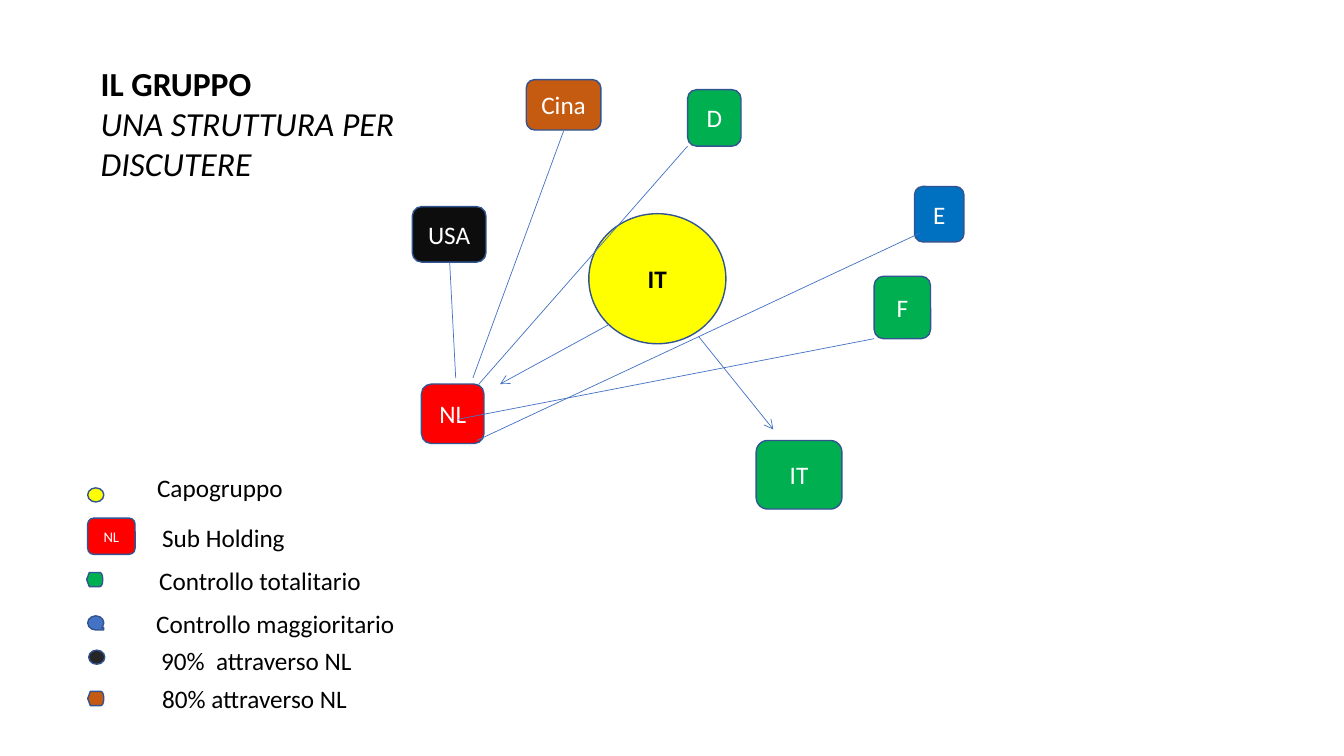
from dataclasses import dataclass

from lxml.etree import SubElement
from pptx import Presentation
from pptx.dml.color import RGBColor
from pptx.enum.shapes import MSO_CONNECTOR, MSO_SHAPE
from pptx.enum.text import MSO_ANCHOR, PP_ALIGN
from pptx.oxml.ns import qn
from pptx.util import Inches, Pt


@dataclass(frozen=True)
class Theme:
    font: str = "Calibri"
    title: float = 24
    body: float = 18
    small: float = 10.5
    text: str = "000000"
    light: str = "FFFFFF"
    outline: str = "325491"
    link: str = "4472C4"
    parent: str = "FFFF00"
    sub_holding: str = "FF0000"
    full: str = "00B050"
    majority: str = "0070C0"
    majority_key: str = "4472C4"
    usa: str = "0D0D0D"
    usa_key: str = "262626"
    china: str = "C55A11"


theme = Theme()
prs = Presentation()
prs.slide_width, prs.slide_height = Inches(13.33), Inches(7.5)
s = prs.slides.add_slide(prs.slide_layouts[6])


def add_node(kind, box, fill, label="", size=theme.body, color=theme.light, bold=False):
    """Draw an outlined company or legend marker with an optional centred label."""
    sp = s.shapes.add_shape(kind, *map(Inches, box))
    sp.shadow.inherit = False
    sp.fill.solid()
    sp.fill.fore_color.rgb = RGBColor.from_string(fill)
    sp.line.color.rgb = RGBColor.from_string(theme.outline)
    sp.line.width = Pt(1)
    if label:
        sp.text_frame.vertical_anchor = MSO_ANCHOR.MIDDLE
        p = sp.text_frame.paragraphs[0]
        p.text = label
        p.alignment = PP_ALIGN.CENTER
        style_paragraph(p, size, color, bold)


def style_paragraph(p, size, color=theme.text, bold=False, italic=False):
    p.font.name = theme.font
    p.font.size = Pt(size)
    p.font.bold = bold
    p.font.italic = italic
    p.font.color.rgb = RGBColor.from_string(color)


# Companies
add_node(MSO_SHAPE.OVAL, (5.84, 2.12, 1.36, 1.29), theme.parent, "IT",
         color=theme.text, bold=True)
companies = [
    ("USA", (4.09, 2.05, 0.73, 0.55), theme.usa),
    ("E", (9.07, 1.85, 0.49, 0.55), theme.majority),
    ("NL", (4.18, 3.81, 0.62, 0.59), theme.sub_holding),
    ("F", (8.67, 2.74, 0.56, 0.62), theme.full),
    ("D", (6.82, 0.89, 0.53, 0.56), theme.full),
    ("IT", (7.5, 4.37, 0.85, 0.68), theme.full),
    ("Cina", (5.22, 0.79, 0.74, 0.5), theme.china),
]
for label, box, fill in companies:
    add_node(MSO_SHAPE.ROUNDED_RECTANGLE, box, fill, label)

# Shareholding links: start, end, arrowhead at the end
links = [
    ((4.52, 3.75), (4.46, 2.6), False),
    ((4.69, 3.75), (5.59, 1.3), False),
    ((4.75, 3.81), (6.82, 1.45), False),
    ((4.73, 4.37), (9.13, 2.31), False),
    ((4.54, 4.16), (8.67, 3.36), False),
    ((6.04, 3.22), (4.96, 3.81), True),
    ((6.93, 3.34), (7.67, 4.26), True),
]
for start, end, arrow in links:
    link = s.shapes.add_connector(MSO_CONNECTOR.STRAIGHT, *map(Inches, start + end))
    link.line.color.rgb = RGBColor.from_string(theme.link)
    link.line.width = Pt(0.5)
    if arrow:
        SubElement(link.line._get_or_add_ln(), qn("a:tailEnd"), type="arrow")
    SubElement(link._element.spPr, qn("a:effectLst"))

# Legend markers
dot = (0.16, 0.14)
markers = [
    (MSO_SHAPE.OVAL, (0.87, 4.84), theme.parent),
    (MSO_SHAPE.FLOWCHART_DISPLAY, (0.86, 5.68), theme.full),
    (MSO_SHAPE.FLOWCHART_SEQUENTIAL_ACCESS_STORAGE, (0.87, 6.11), theme.majority_key),
    (MSO_SHAPE.OVAL, (0.88, 6.45), theme.usa_key),
    (MSO_SHAPE.FLOWCHART_DISPLAY, (0.87, 6.86), theme.china),
]
for kind, corner, fill in markers:
    add_node(kind, corner + dot, fill)
add_node(MSO_SHAPE.ROUNDED_RECTANGLE, (0.87, 5.14, 0.47, 0.36), theme.sub_holding,
         "NL", theme.small)

# Title and legend texts: box, then (text, size, bold, italic) per paragraph
texts = [
    ((0.9, 0.57, 4.17, 1.31), [("IL GRUPPO", theme.title, True, False),
                               ("UNA STRUTTURA PER DISCUTERE", theme.title, False, True)]),
]
legend = [
    ("Capogruppo", (1.46, 4.64, 2.83, 0.4)),
    ("Sub Holding", (1.51, 5.13, 1.47, 0.4)),
    ("Controllo totalitario", (1.48, 5.56, 2.43, 0.4)),
    ("Controllo maggioritario", (1.45, 5.99, 3.51, 0.4)),
    ("90%  attraverso NL", (1.5, 6.35, 4.25, 0.4)),
    ("80% attraverso NL", (1.51, 6.73, 2.37, 0.4)),
]
texts += [(box, [(label, theme.body, False, False)]) for label, box in legend]
for box, paragraphs in texts:
    tf = s.shapes.add_textbox(*map(Inches, box)).text_frame
    tf.word_wrap = True
    for i, (text, size, bold, italic) in enumerate(paragraphs):
        p = tf.add_paragraph() if i else tf.paragraphs[0]
        p.text = text
        style_paragraph(p, size, bold=bold, italic=italic)

prs.save("out.pptx")
